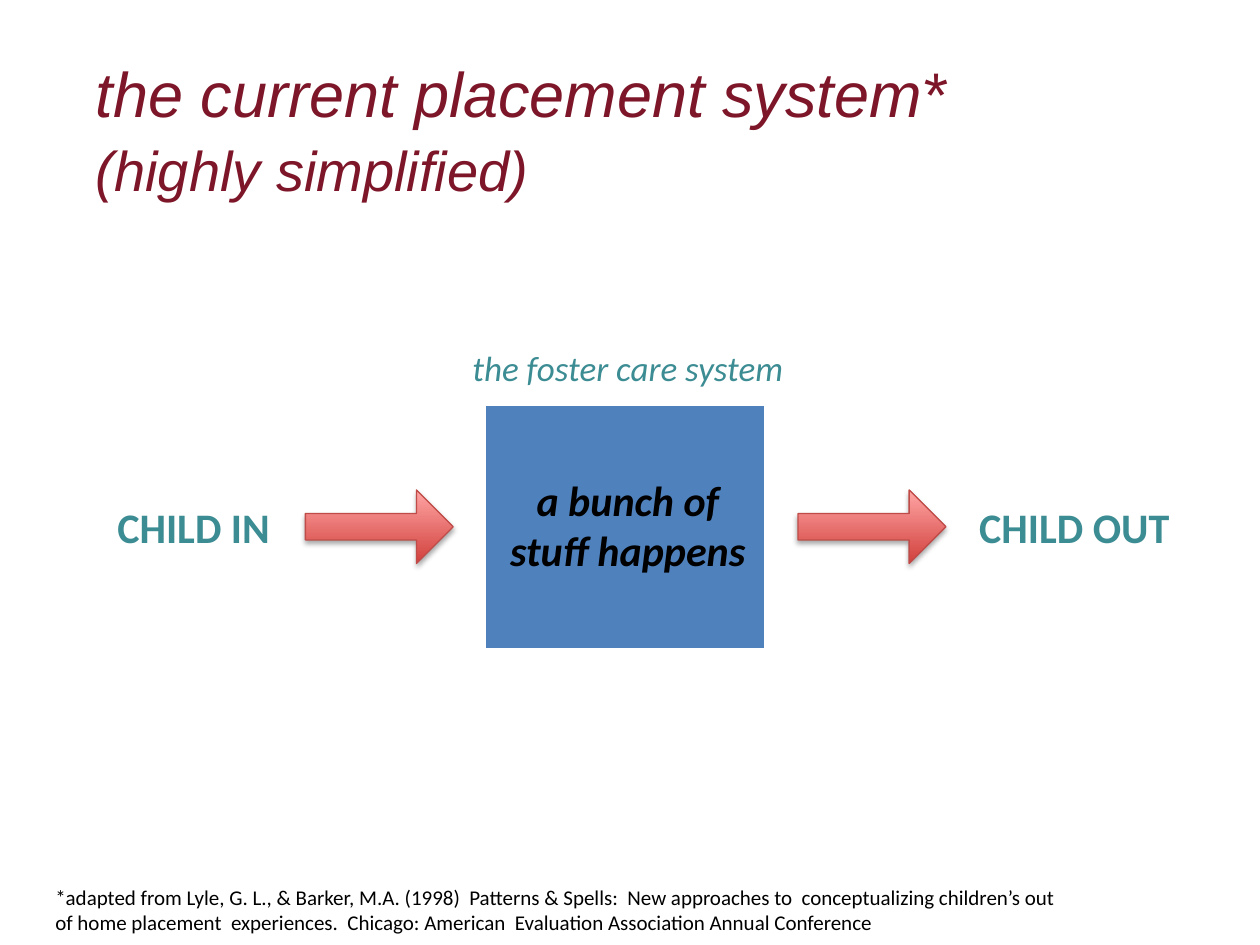
from dataclasses import dataclass

from lxml.etree import SubElement
from pptx import Presentation
from pptx.dml.color import RGBColor as RGB
from pptx.enum.shapes import MSO_SHAPE as Shape
from pptx.enum.text import MSO_ANCHOR as Anchor, MSO_AUTO_SIZE as Fit, PP_ALIGN as Align
from pptx.oxml.ns import qn
from pptx.util import Pt


@dataclass(frozen=True)
class Theme:
    maroon: RGB = RGB(0x7D, 0x16, 0x28)
    teal: RGB = RGB(0x3C, 0x8C, 0x93)
    blue: RGB = RGB(0x4F, 0x81, 0xBD)
    white: RGB = RGB(0xFF, 0xFF, 0xFF)
    black: RGB = RGB(0, 0, 0)
    red_dark: RGB = RGB(0xD1, 0x40, 0x3C)
    red_light: RGB = RGB(0xFF, 0xA6, 0xA5)
    red_line: RGB = RGB(0xBF, 0x4C, 0x48)
    title_font: str = "Arial"
    body_font: str = "Calibri"
    title: int = 36
    subtitle: int = 32
    label: int = 24
    caption: int = 20
    note: int = 12


T = Theme()


def place(sp, x, y, w, h):
    sp.left, sp.top, sp.width, sp.height = Pt(x), Pt(y), Pt(w), Pt(h)


def add_run(p, text, size, color, font=T.body_font, bold=False, italic=False):
    r = p.add_run()
    r.text = text
    f = r.font
    f.name, f.size, f.bold, f.italic = font, Pt(size), bold, italic
    f.color.rgb = color


def add_text(s, box, text, size, color, align=Align.LEFT, wrap=True, **style):
    tf = s.shapes.add_textbox(*map(Pt, box)).text_frame
    tf.word_wrap = wrap
    tf.auto_size = Fit.SHAPE_TO_FIT_TEXT
    p = tf.paragraphs[0]
    p.alignment = align
    add_run(p, text, size, color, **style)


def add_arrow(s, x, y, w, h):
    sp = s.shapes.add_shape(Shape.RIGHT_ARROW, Pt(x), Pt(y), Pt(w), Pt(h))
    sp.adjustments[0] = 0.36
    sp.fill.gradient()
    sp.fill.gradient_angle = 90
    for stop, color in zip(sp.fill.gradient_stops, (T.red_dark, T.red_light)):
        stop.color.rgb = color
    sp.line.color.rgb = T.red_line
    sp.line.width = Pt(0.75)
    effects = SubElement(sp._element.spPr, qn("a:effectLst"))
    shadow = SubElement(effects, qn("a:outerShdw"), blurRad=str(Pt(3.1)),
                        dist=str(Pt(1.8)), dir="5400000", rotWithShape="0")
    color = SubElement(shadow, qn("a:srgbClr"), val=str(T.black))
    SubElement(color, qn("a:alpha"), val="35000")


def add_title(s, x, y, w, h):
    sp = s.shapes.title
    place(sp, x, y, w, h)
    tf = sp.text_frame
    tf.vertical_anchor = Anchor.TOP
    tf.auto_size = Fit.NONE
    p = tf.paragraphs[0]
    p.alignment = Align.LEFT
    p.line_spacing = 1.08
    style = dict(color=T.maroon, font=T.title_font, italic=True)
    add_run(p, "the current placement system*", T.title, **style)
    p.add_line_break()
    SubElement(p._p.find(qn("a:br")), qn("a:rPr"), sz=str(T.title * 100))
    add_run(p, "(highly simplified)", T.subtitle, **style)


def add_system(s, x, y, w, h):
    sp = s.shapes.add_shape(Shape.RECTANGLE, Pt(x), Pt(y), Pt(w), Pt(h))
    sp.shadow.inherit = False
    sp.fill.solid()
    sp.fill.fore_color.rgb = T.blue
    sp.line.color.rgb = T.white
    sp.line.width = Pt(2.75)
    add_text(s, (x + 1.5, y + 37, w, 65.5), "a bunch of stuff happens",
             T.label, T.black, Align.CENTER, bold=True, italic=True)
    add_text(s, (x - 50, y - 36, w + 103, 31.5), "the foster care system",
             T.caption, T.teal, Align.CENTER, italic=True)


def add_flow(s, x, y, w, h):
    add_system(s, x + 216.5, y, 161.5, h)
    label_y, arrow_y = y + 52.5, y + 49.5
    for text, dx, label_w in (("CHILD IN", 0, 102), ("CHILD OUT", w - 124.5, 124.5)):
        add_text(s, (x + dx, label_y, label_w, 36), text,
                 T.label, T.teal, wrap=False, bold=True)
    for dx in (114.5, 396):
        add_arrow(s, x + dx, arrow_y, 84.5, 42)


def add_footnote(s, x, y, w, h):
    add_text(s, (x, y, w, h),
             "*adapted from Lyle, G. L., & Barker, M.A. (1998)  Patterns & Spells:  "
             "New approaches to  conceptualizing children’s out of home placement  "
             "experiences.  Chicago: American  Evaluation Association Annual Conference",
             T.note, T.black)


def main():
    prs = Presentation()
    prs.slide_width, prs.slide_height = Pt(720), Pt(540)
    s = prs.slides.add_slide(prs.slide_layouts[5])
    add_title(s, 47.5, 24, 648, 65.5)
    add_flow(s, 60, 230.5, 617, 141)
    add_footnote(s, 24.5, 502, 588, 36.5)
    prs.save("out.pptx")


if __name__ == "__main__":
    main()
